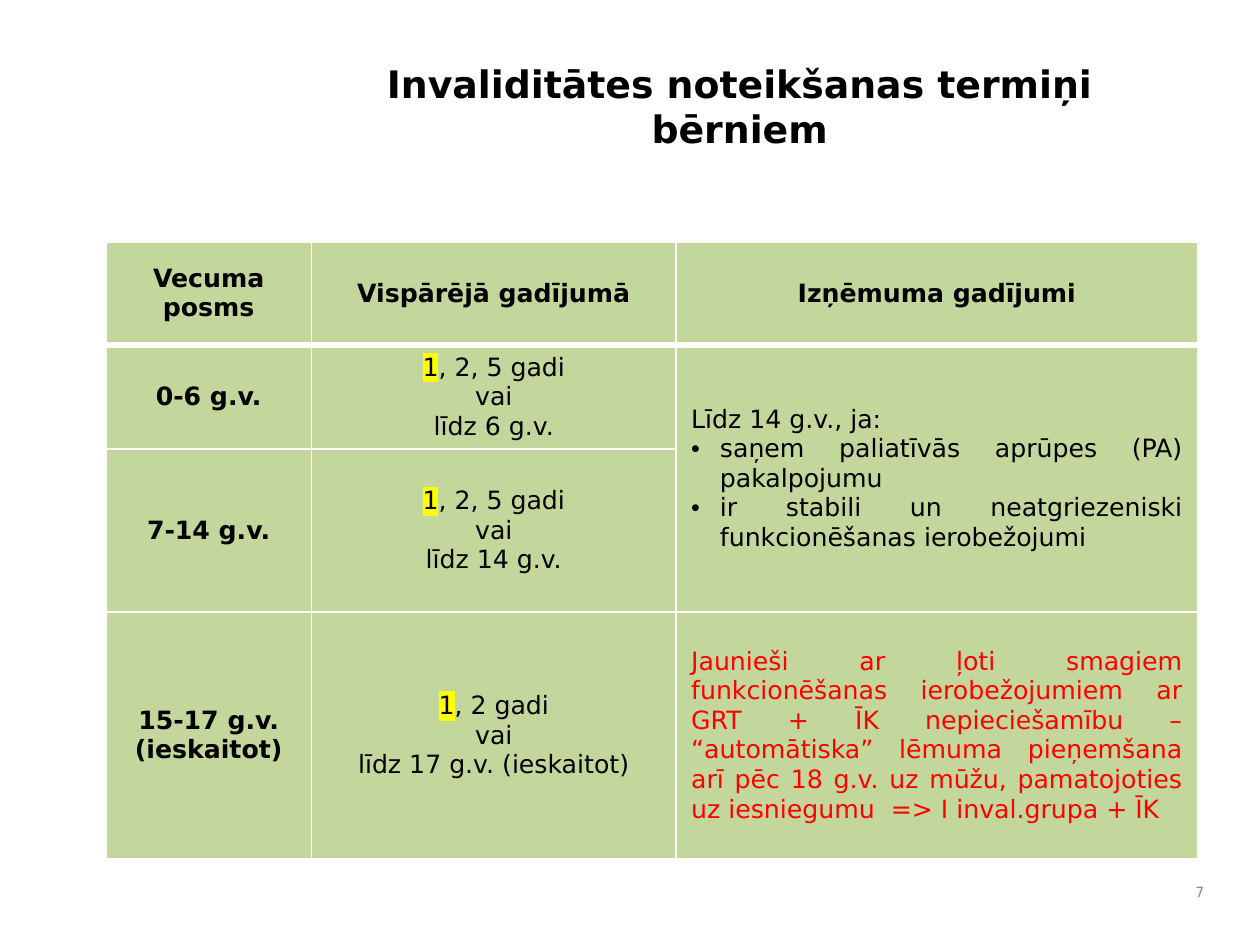
from lxml import etree
from pptx import Presentation
from pptx.dml.color import RGBColor
from pptx.enum.text import MSO_ANCHOR, MSO_AUTO_SIZE, PP_ALIGN
from pptx.oxml.ns import qn
from pptx.util import Inches, Pt

TITLE = "Invaliditātes noteikšanas termiņi bērniem"
HEADS = ["Vecuma posms", "Vispārējā gadījumā", "Izņēmuma gadījumi"]
TERMS = [
    ("0-6 g.v.", ", 2, 5 gadi", "līdz 6 g.v."),
    ("7-14 g.v.", ", 2, 5 gadi", "līdz 14 g.v."),
    ("15-17 g.v. (ieskaitot)", ", 2 gadi", "līdz 17 g.v. (ieskaitot)"),
]
CHILD = "Līdz 14 g.v., ja:"
CASES = [
    "saņem paliatīvās aprūpes (PA) pakalpojumu",
    "ir stabili un neatgriezeniski funkcionēšanas ierobežojumi",
]
YOUTH = (
    "Jaunieši ar ļoti smagiem funkcionēšanas ierobežojumiem ar GRT + ĪK "
    "nepieciešamību – “automātiska” lēmuma pieņemšana arī pēc 18 g.v. uz mūžu, "
    "pamatojoties uz iesniegumu  => I inval.grupa + ĪK"
)
NUMBER = "7"
COLS = [1.36, 2.41, 3.45]
ROWS = [0.68, 0.69, 1.08, 1.63]

FONT = "DejaVu Sans"
BLACK = RGBColor(0x00, 0x00, 0x00)
RED = RGBColor(0xFF, 0x00, 0x00)
GRAY = RGBColor(0x89, 0x89, 0x89)
GREEN = RGBColor(0xC3, 0xD6, 0x9B)
WHITE = RGBColor(0xFF, 0xFF, 0xFF)
YELLOW = RGBColor(0xFF, 0xFF, 0x00)
CENTER, RIGHT, JUSTIFY = PP_ALIGN.CENTER, PP_ALIGN.RIGHT, PP_ALIGN.JUSTIFY
TOP, MIDDLE = MSO_ANCHOR.TOP, MSO_ANCHOR.MIDDLE
NO_FIT = MSO_AUTO_SIZE.NONE


def add_color(node, color):
    etree.SubElement(node, qn("a:srgbClr"), val=str(color))


def write(frame, text, size=12, color=BLACK, bold=False, align=CENTER,
          mark="", bullet=False):
    para = frame.paragraphs[0]
    if para.runs:
        para = frame.add_paragraph()
    para.alignment = align
    if bullet:
        props = para._p.get_or_add_pPr()
        props.set("marL", str(Inches(0.19)))
        props.set("indent", str(-Inches(0.19)))
        etree.SubElement(props, qn("a:buFont"), typeface="Arial")
        etree.SubElement(props, qn("a:buChar"), char="•")
    for part in filter(None, (mark, text)):
        run = para.add_run()
        run.text = part
        font = run.font
        font.name, font.size, font.bold = FONT, Pt(size), bold
        font.color.rgb = color
        if part == mark:
            light = etree.Element(qn("a:highlight"))
            add_color(light, YELLOW)
            run._r.rPr.find(qn("a:latin")).addprevious(light)


def style(cell, row):
    cell.vertical_anchor = MIDDLE
    cell.fill.solid()
    cell.fill.fore_color.rgb = GREEN
    widths = {"L": 1, "R": 1, "T": 3 if row == 1 else 1, "B": 3 if row == 0 else 1}
    props = cell._tc.get_or_add_tcPr()
    for spot, (side, width) in enumerate(widths.items()):
        line = etree.Element(qn("a:ln" + side), w=str(Pt(width)))
        add_color(etree.SubElement(line, qn("a:solidFill")), WHITE)
        props.insert(spot, line)


def add_terms(slide):
    shape = slide.shapes.add_table(len(ROWS), len(COLS), Inches(0.7), Inches(1.6),
                                   Inches(sum(COLS)), Inches(sum(ROWS)))
    table = shape.table
    for col, width in zip(table.columns, COLS):
        col.width = Inches(width)
    for row, height in zip(table.rows, ROWS):
        row.height = Inches(height)
    for r in range(len(ROWS)):
        for c in range(len(COLS)):
            style(table.cell(r, c), r)
    table.cell(1, 2).merge(table.cell(2, 2))

    for c, head in enumerate(HEADS):
        write(table.cell(0, c).text_frame, head, bold=True)
    for r, (age, years, limit) in enumerate(TERMS, 1):
        write(table.cell(r, 0).text_frame, age, bold=True)
        frame = table.cell(r, 1).text_frame
        write(frame, years, mark="1")
        write(frame, "vai")
        write(frame, limit)
    frame = table.cell(1, 2).text_frame
    write(frame, CHILD, align=JUSTIFY)
    for case in CASES:
        write(frame, case, align=JUSTIFY, bullet=True)
    write(table.cell(3, 2).text_frame, YOUTH, color=RED, align=JUSTIFY)


def main():
    """Build the slide on disability terms for children."""
    deck = Presentation()
    deck.slide_width, deck.slide_height = Inches(8.33), Inches(6.25)
    slide = deck.slides.add_slide(deck.slide_layouts[5])
    title = slide.shapes.title
    title.left, title.top = Inches(1.87), Inches(0.35)
    title.width, title.height = Inches(6.04), Inches(0.79)
    frame = title.text_frame
    frame.auto_size, frame.vertical_anchor = NO_FIT, TOP
    write(frame, TITLE, size=18, bold=True)

    add_terms(slide)

    box = slide.shapes.add_textbox(Inches(7.78), Inches(5.76),
                                   Inches(0.28), Inches(0.28))
    box.text_frame.word_wrap = True
    box.text_frame.vertical_anchor = MIDDLE
    write(box.text_frame, NUMBER, size=6.7, color=GRAY, align=RIGHT)
    deck.save("out.pptx")


if __name__ == "__main__":
    main()
